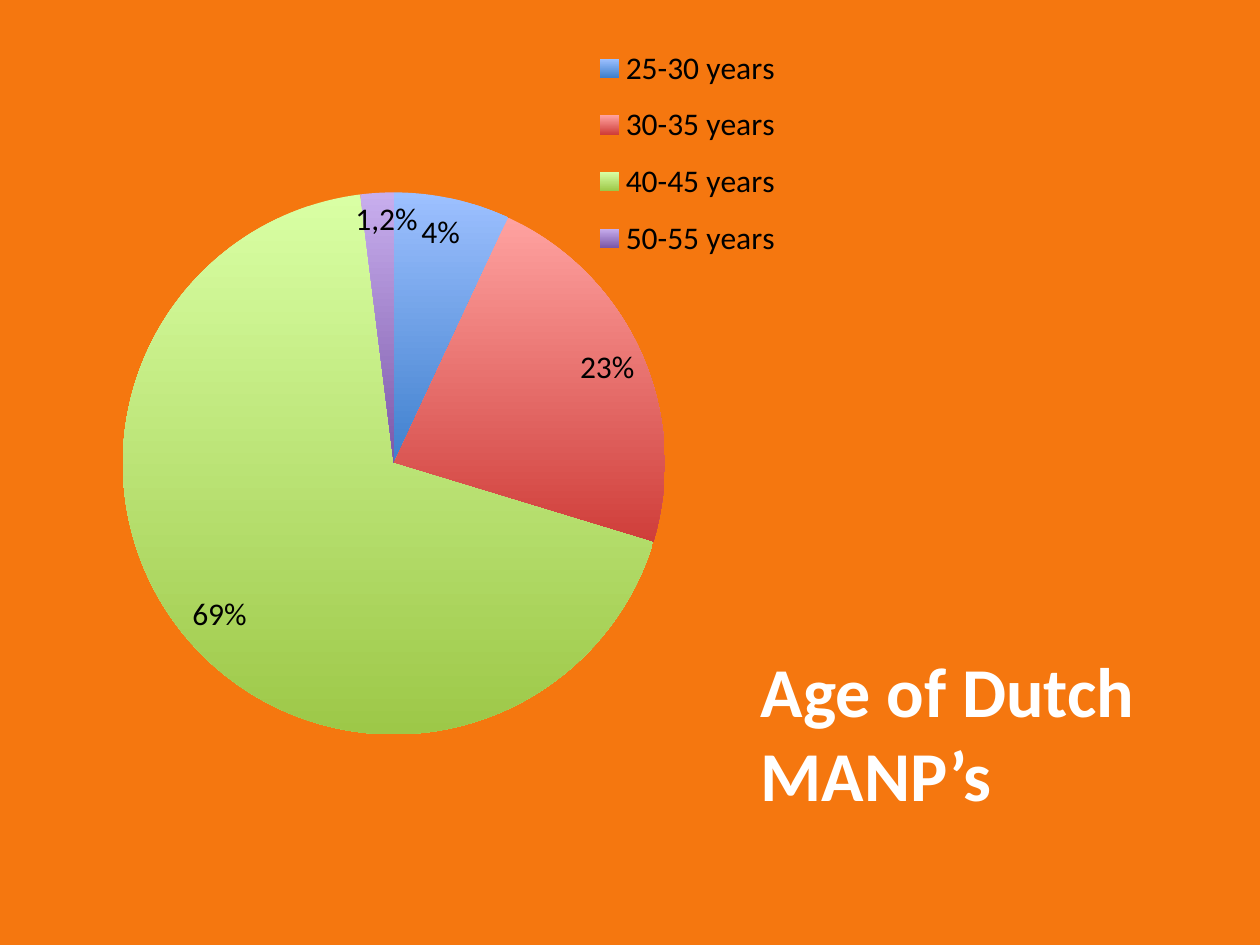
from dataclasses import dataclass

from lxml import etree
from pptx import Presentation
from pptx import util as u
from pptx.chart.data import CategoryChartData
from pptx.dml.color import RGBColor
from pptx.enum import chart as charts
from pptx.oxml.ns import qn


@dataclass
class AgeGroup:
    name: str
    share: int
    label: str
    top_color: str
    bottom_color: str
    label_shift: tuple[float, float]


AGE_GROUPS = [
    AgeGroup("25-30 years", 7, "4%", "9DC0FF", "3F80CD", (0.01, 0.01)),
    AgeGroup("30-35 years", 23, "23%", "FFA2A0", "CF3E3A", (0, -0.01)),
    AgeGroup("40-45 years", 69, "69%", "D9FFA4", "9DC848", (0, 0)),
    AgeGroup("50-55 years", 2, "1,2%", "C8AEEE", "7B58A8", (0.01, 0)),
]
FONT = "Calibri"
EDGES = {"xMode": "edge", "yMode": "edge"}


def rgb(value: str) -> RGBColor:
    return RGBColor.from_string(value)


def style_font(font, size: int, color: str, bold: bool = False) -> None:
    font.name = FONT
    font.size = u.Pt(size)
    font.bold = bold
    font.color.rgb = rgb(color)


def set_layout(parent, index: int, settings: dict) -> None:
    for existing in parent.findall(qn("c:layout")):
        parent.remove(existing)
    layout = etree.Element(qn("c:layout"))
    manual = etree.SubElement(layout, qn("c:manualLayout"))
    for key, value in settings.items():
        etree.SubElement(manual, qn(f"c:{key}")).set("val", str(value))
    parent.insert(index, layout)


def style_slice(point, group: AgeGroup) -> None:
    fill = point.format.fill
    fill.gradient()
    fill.gradient_angle = 270
    for stop, color in zip(fill.gradient_stops, (group.top_color, group.bottom_color)):
        stop.color.rgb = rgb(color)
    point.format.line.fill.background()
    label = point.data_label
    label.text_frame.text = group.label
    style_font(label.text_frame.paragraphs[0].runs[0].font, 18, "000000")
    label.position = charts.XL_LABEL_POSITION.INSIDE_END


def add_age_chart(slide) -> None:
    data = CategoryChartData()
    data.categories = [group.name for group in AGE_GROUPS]
    data.add_series("Series 1", [group.share for group in AGE_GROUPS])
    chart = slide.shapes.add_chart(
        charts.XL_CHART_TYPE.PIE,
        u.Inches(0.33), u.Inches(0), u.Inches(7.17), u.Inches(6.08), data,
    ).chart
    chart.has_title = False
    style_font(chart.font, 18, "000000")
    chart.has_legend = True
    chart.legend.position = charts.XL_LEGEND_POSITION.RIGHT
    chart.legend.include_in_layout = False
    chart_element = chart.element.find(qn("c:chart"))
    set_layout(chart_element.find(qn("c:plotArea")), 0,
               {"layoutTarget": "inner", **EDGES, "x": 0.09, "y": 0.25, "w": 0.6, "h": 0.71})
    set_layout(chart_element.find(qn("c:legend")), 1,
               {**EDGES, "x": 0.58, "y": 0.04, "w": 0.27, "h": 0.32})
    for index, group in enumerate(AGE_GROUPS):
        style_slice(chart.plots[0].series[0].points[index], group)
    for label, group in zip(chart_element.iter(qn("c:dLbl")), AGE_GROUPS):
        if any(group.label_shift):
            set_layout(label, 1, dict(zip("xy", group.label_shift)))


def add_title(slide) -> None:
    box = slide.shapes.add_textbox(
        u.Inches(5.94), u.Inches(5.09), u.Inches(3.72), u.Inches(1.45))
    box.text_frame.word_wrap = True
    box.text_frame.text = "Age of Dutch MANP’s"
    style_font(box.text_frame.paragraphs[0].runs[0].font, 40, "FFFFFF", bold=True)


def main() -> None:
    presentation = Presentation()
    presentation.slide_width = u.Inches(10)
    presentation.slide_height = u.Inches(7.5)
    slide = presentation.slides.add_slide(presentation.slide_layouts[6])
    slide.background.fill.solid()
    slide.background.fill.fore_color.rgb = rgb("F5770F")
    add_age_chart(slide)
    add_title(slide)
    presentation.save("out.pptx")


if __name__ == "__main__":
    main()
